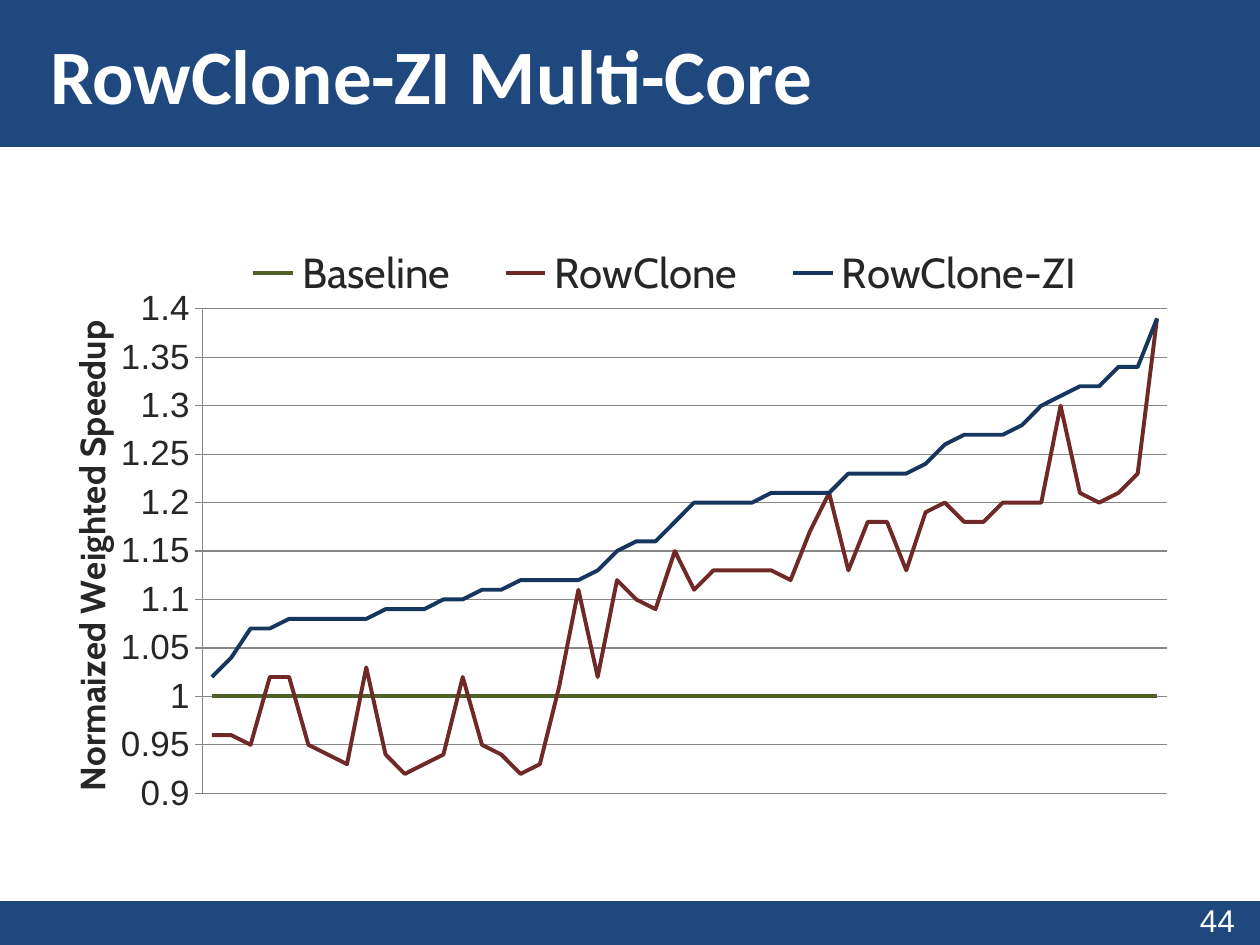
from lxml import etree
from pptx import Presentation
from pptx.chart.data import CategoryChartData
from pptx.dml.color import RGBColor
from pptx.enum.chart import XL_CHART_TYPE, XL_LEGEND_POSITION, XL_TICK_MARK
from pptx.enum.shapes import MSO_SHAPE
from pptx.enum.text import MSO_ANCHOR, PP_ALIGN
from pptx.oxml.ns import qn
from pptx.util import Pt

LINE_CHART = XL_CHART_TYPE.LINE
LEGEND_TOP = XL_LEGEND_POSITION.TOP
TICK_CROSS = XL_TICK_MARK.CROSS
RECTANGLE = MSO_SHAPE.RECTANGLE
MIDDLE = MSO_ANCHOR.MIDDLE
LEFT, RIGHT = PP_ALIGN.LEFT, PP_ALIGN.RIGHT

COLORS = {
    "band": "1F487F", "white": "FFFFFF", "text": "262626", "grid": "878787",
    "Baseline": "4F6128", "RowClone": "6F2926", "RowClone-ZI": "17365D",
}
SPEEDUPS = {
    "Baseline": [1] * 50,
    "RowClone": [
        0.96, 0.96, 0.95, 1.02, 1.02, 0.95, 0.94, 0.93, 1.03, 0.94,
        0.92, 0.93, 0.94, 1.02, 0.95, 0.94, 0.92, 0.93, 1.01, 1.11,
        1.02, 1.12, 1.1, 1.09, 1.15, 1.11, 1.13, 1.13, 1.13, 1.13,
        1.12, 1.17, 1.21, 1.13, 1.18, 1.18, 1.13, 1.19, 1.2, 1.18,
        1.18, 1.2, 1.2, 1.2, 1.3, 1.21, 1.2, 1.21, 1.23, 1.39],
    "RowClone-ZI": [
        1.02, 1.04, 1.07, 1.07, 1.08, 1.08, 1.08, 1.08, 1.08, 1.09,
        1.09, 1.09, 1.1, 1.1, 1.11, 1.11, 1.12, 1.12, 1.12, 1.12,
        1.13, 1.15, 1.16, 1.16, 1.18, 1.2, 1.2, 1.2, 1.2, 1.21,
        1.21, 1.21, 1.21, 1.23, 1.23, 1.23, 1.23, 1.24, 1.26, 1.27,
        1.27, 1.27, 1.28, 1.3, 1.31, 1.32, 1.32, 1.34, 1.34, 1.39],
}


def color(name):
    return RGBColor.from_string(COLORS[name])


def set_values(target, **values):
    for name, value in values.items():
        setattr(target, name, value)


def set_font(font, size, face, color_name, bold=False):
    set_values(font, size=Pt(size), name=face, bold=bold)
    font.color.rgb = color(color_name)


def set_line(line, color_name, width):
    line.color.rgb = color(color_name)
    line.width = Pt(width)


def write_text(shape, text, align, margins, **font):
    frame = shape.text_frame
    left, top, right, bottom = map(Pt, margins)
    set_values(frame, word_wrap=True, vertical_anchor=MIDDLE, margin_left=left,
               margin_top=top, margin_right=right, margin_bottom=bottom)
    para = frame.paragraphs[0]
    para.alignment = align
    span = para.add_run()
    span.text = text
    set_font(span.font, **font)


def set_layout(element, index, **fractions):
    """Place a chart part by fractions of the chart area."""
    for old in element.findall(qn("c:layout")):
        element.remove(old)
    layout = etree.Element(qn("c:layout"))
    manual = etree.SubElement(layout, qn("c:manualLayout"))
    if "w" in fractions and element.tag == qn("c:plotArea"):
        etree.SubElement(manual, qn("c:layoutTarget"), val="inner")
    for mode in ("xMode", "yMode"):
        etree.SubElement(manual, qn(f"c:{mode}"), val="edge")
    for name, value in fractions.items():
        etree.SubElement(manual, qn(f"c:{name}"), val=str(value))
    element.insert(index, layout)


def add_title(page, box):
    title = page.shapes.title
    left, top, width, height = map(Pt, box)
    set_values(title, left=left, top=top, width=width, height=height)
    title.fill.solid()
    title.fill.fore_color.rgb = color("band")
    write_text(title, "RowClone-ZI Multi-Core", LEFT, (28.8, 3.6, 7.2, 3.6),
               size=44, face="Calibri", color_name="white", bold=True)


def add_footer(page, box):
    left, top, width, height = box
    band = page.shapes.add_shape(RECTANGLE, *map(Pt, box))
    band.shadow.inherit = False
    band.fill.solid()
    band.fill.fore_color.rgb = color("band")
    set_line(band.line, "band", 2)

    number_width = 168
    number = page.shapes.add_textbox(
        Pt(left + width - number_width), Pt(top - 2.6), Pt(number_width), Pt(height))
    write_text(number, "44", RIGHT, (7.2, 3.6, 14.4, 3.6),
               size=18, face="Arial", color_name="white")


def add_speedup_chart(page, box):
    data = CategoryChartData()
    data.categories = [str(number) for number in range(1, 51)]
    for name, values in SPEEDUPS.items():
        data.add_series(name, values)
    chart = page.shapes.add_chart(LINE_CHART, *map(Pt, box), data).chart
    chart.has_title = False
    set_font(chart.font, 10, "Cabin", "text")

    # Lines
    plot = chart.plots[0]
    plot.vary_by_categories = False
    for series in plot.series:
        series.smooth = False
        set_line(series.format.line, series.name, 2.25)
    plot_area = chart.element.find(".//" + qn("c:plotArea"))
    set_layout(plot_area, 0, x=0.132, y=0.172, w=0.83, h=0.777)

    # Axes
    chart.category_axis.visible = False
    axis = chart.value_axis
    set_values(axis, minimum_scale=0.9, maximum_scale=1.4, major_unit=0.05,
               major_tick_mark=TICK_CROSS, has_major_gridlines=True)
    for line in (axis.format.line, axis.major_gridlines.format.line):
        set_line(line, "grid", 0.75)
    set_values(axis.tick_labels, number_format="General",
               number_format_is_linked=False)
    set_font(axis.tick_labels.font, 20, "Arial", "text")
    para = axis.axis_title.text_frame.paragraphs[0]
    span = para.add_run()
    span.text = "Normaized Weighted Speedup"
    set_font(span.font, 20, "Cabin", "text", bold=True)
    set_layout(axis.axis_title._element, 1, x=0.01, y=0.18)

    # Legend
    chart.has_legend = True
    legend = chart.legend
    set_values(legend, position=LEGEND_TOP, include_in_layout=False)
    set_font(legend.font, 24, "Cabin", "text")
    set_layout(legend._element, 1, x=0.14, y=0.07, w=0.78, h=0.09)


def main():
    deck = Presentation()
    set_values(deck, slide_width=Pt(720), slide_height=Pt(540))
    page = deck.slides.add_slide(deck.slide_layouts[5])
    add_footer(page, (0, 516, 720, 24))
    add_title(page, (0, 0, 720, 84))
    add_speedup_chart(page, (28, 115.2, 664, 356.4))
    deck.save("out.pptx")


if __name__ == "__main__":
    main()
